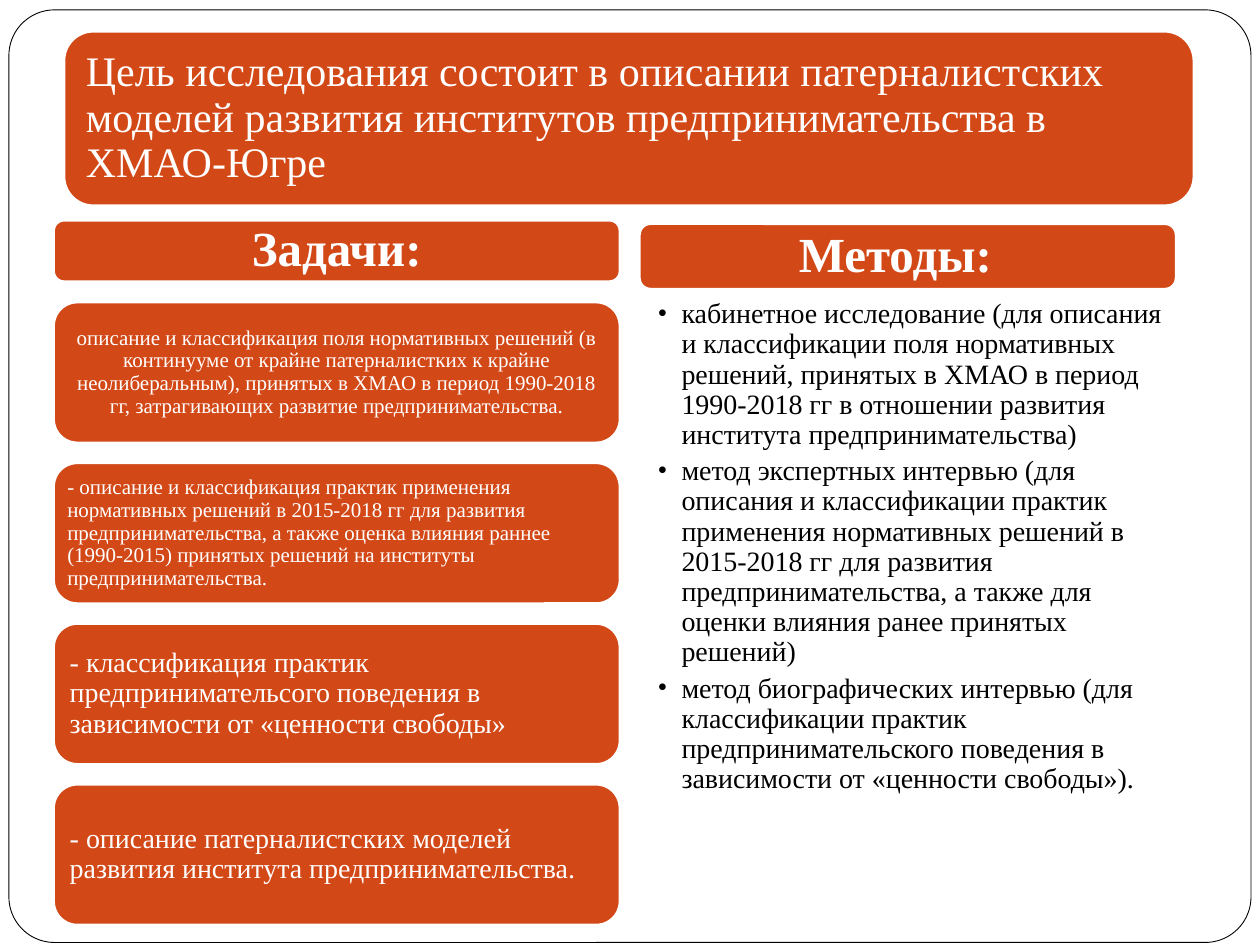
"""Builds a slide with the goal, tasks and methods of a study."""
from lxml.etree import SubElement
from pptx import Presentation
from pptx.dml.color import RGBColor
from pptx.enum.shapes import MSO_SHAPE as SHAPE
from pptx.enum.text import MSO_ANCHOR as ANCHOR, MSO_AUTO_SIZE as AUTO, PP_ALIGN as ALIGN
from pptx.oxml.ns import qn
from pptx.util import Cm, Pt

ORANGE = RGBColor(0xD3, 0x48, 0x17)
WHITE = RGBColor(0xFF, 0xFF, 0xFF)
BLACK = RGBColor(0, 0, 0)
FONT = "Times New Roman"

GOAL = "Цель исследования состоит в описании патерналистских моделей развития институтов предпринимательства в ХМАО-Югре"
TASKS = [
    ("описание и классификация поля нормативных решений (в континууме от крайне патерналистких к крайне неолиберальным), принятых в ХМАО в период 1990-2018 гг, затрагивающих развитие предпринимательства.", 12, ALIGN.CENTER, 0.13),
    ("- описание и классификация практик применения нормативных решений в 2015-2018 гг для развития предпринимательства, а также оценка влияния раннее (1990-2015) принятых решений на институты предпринимательства.", 12, ALIGN.LEFT, 0.13),
    ("- классификация практик предпринимательсого поведения в зависимости от «ценности свободы»", 16, ALIGN.LEFT, 0.18),
    ("- описание патерналистских моделей развития института предпринимательства.", 16, ALIGN.LEFT, 0.18),
]
METHODS = [
    "кабинетное исследование (для описания и классификации поля нормативных решений, принятых в ХМАО в период 1990-2018 гг в отношении развития института предпринимательства)",
    "метод экспертных интервью (для описания и классификации практик применения нормативных решений в 2015-2018 гг для развития предпринимательства, а также для оценки влияния ранее принятых решений)",
    "метод биографических интервью (для классификации практик предпринимательского поведения в зависимости от «ценности свободы»).",
]

GOAL_BOX = (1.3, 0.64, 22.76, 3.5)
TASK_LEFT, TASK_TOP, TASK_W, TASK_H, TASK_GAP = 1.09, 6.1, 11.4, 2.82, 0.42
HEADINGS = [
    ("Задачи:", (TASK_LEFT, 4.45, TASK_W, 1.22), 0.3),
    ("Методы:", (12.9, 4.52, 10.8, 1.3), 0.8),
]
METHODS_BOX = (12.9, 5.99, 11.2, 9.75)


def add_panel(slide, box, fill, line, width):
    sp = slide.shapes.add_shape(SHAPE.ROUNDED_RECTANGLE, *map(Cm, box))
    sp.shadow.inherit = False
    sp.fill.solid()
    sp.fill.fore_color.rgb = fill
    sp.line.color.rgb = line
    sp.line.width = Pt(width)
    return sp


def write(sp, texts, size, insets, color=WHITE, align=ALIGN.LEFT,
          bold=False, anchor=ANCHOR.MIDDLE, after=0):
    tf = sp.text_frame
    tf.word_wrap = True
    tf.auto_size = AUTO.NONE
    tf.vertical_anchor = anchor
    tf.margin_left, tf.margin_top, tf.margin_right, tf.margin_bottom = map(Cm, insets)
    tf.text = "\n".join(texts)
    for p in tf.paragraphs:
        p.alignment = align
        p.line_spacing = 0.9
        p.space_before = Pt(0)
        p.space_after = Pt(after)
        font = p.runs[0].font
        font.name, font.size, font.bold = FONT, Pt(size), bold
        font.color.rgb = color
    return tf


def add_bullet(p, indent):
    pPr = p._p.get_or_add_pPr()
    pPr.set("marL", str(indent))
    pPr.set("indent", str(-indent))
    SubElement(pPr, qn("a:buFont"), typeface=FONT)
    SubElement(pPr, qn("a:buChar"), char="•")


def main():
    prs = Presentation()
    prs.slide_width, prs.slide_height = Cm(25.4), Cm(19.05)
    slide = prs.slides.add_slide(prs.slide_layouts[5])

    frame = add_panel(slide, (0.18, 0.2, 25.04, 18.8), WHITE, BLACK, 0.5)
    frame.adjustments[0] = 0.049

    add_panel(slide, GOAL_BOX, ORANGE, WHITE, 1)
    title = slide.shapes.title
    title.left, title.top, title.width, title.height = map(Cm, GOAL_BOX)
    write(title, [GOAL], 24, (0.43, 0.25, 0.43, 0.25))
    slide.shapes._spTree.append(title._element)

    for text, box, right in HEADINGS:
        sp = add_panel(slide, box, ORANGE, WHITE, 1)
        write(sp, [text], 28, (0.3, 0, right, 0), align=ALIGN.CENTER, bold=True)

    for i, (text, size, align, inset) in enumerate(TASKS):
        top = TASK_TOP + i * (TASK_H + TASK_GAP)
        sp = add_panel(slide, (TASK_LEFT, top, TASK_W, TASK_H), ORANGE, WHITE, 1)
        write(sp, [text], size, [inset] * 4, align=align)

    methods = slide.shapes.add_textbox(*map(Cm, METHODS_BOX))
    tf = write(methods, METHODS, 16, (0.36, 0.05, 0.3, 0.05), BLACK,
               anchor=ANCHOR.TOP, after=3.4)
    for p in tf.paragraphs:
        add_bullet(p, Cm(0.48))

    prs.save("out.pptx")


if __name__ == "__main__":
    main()
